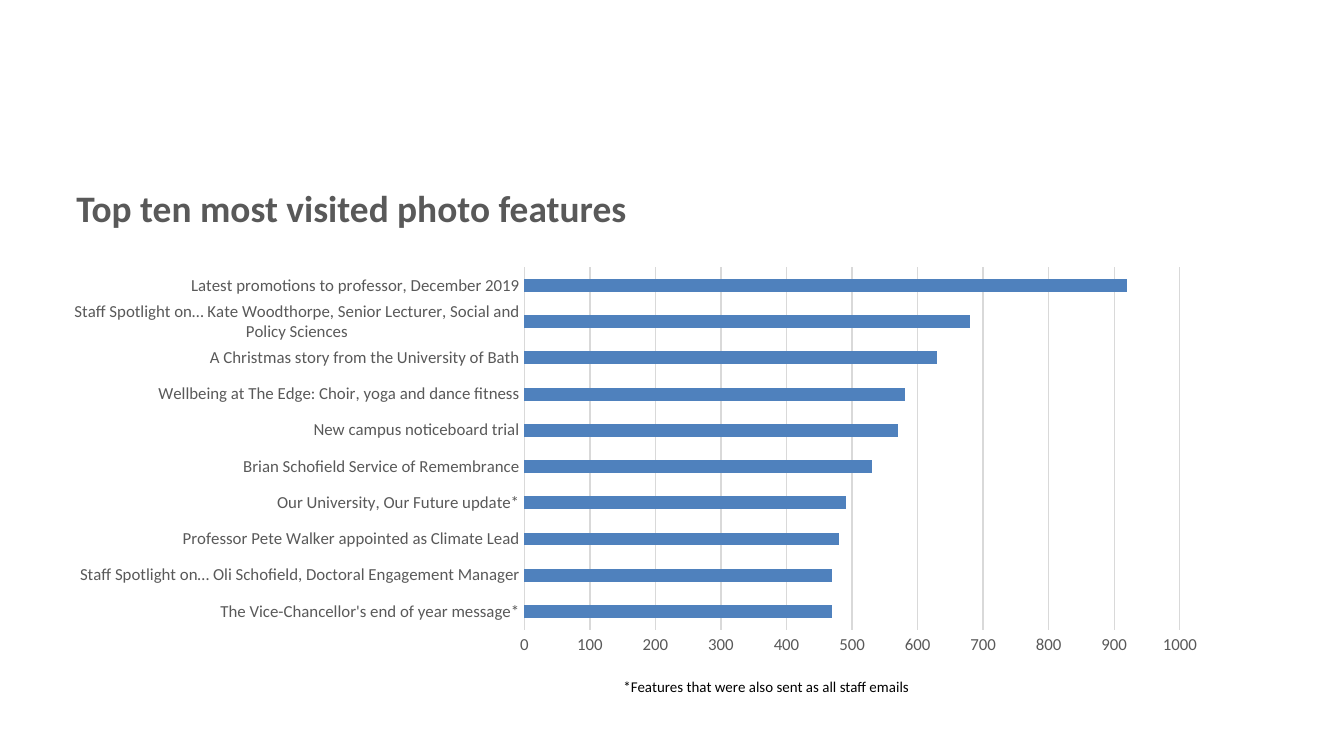
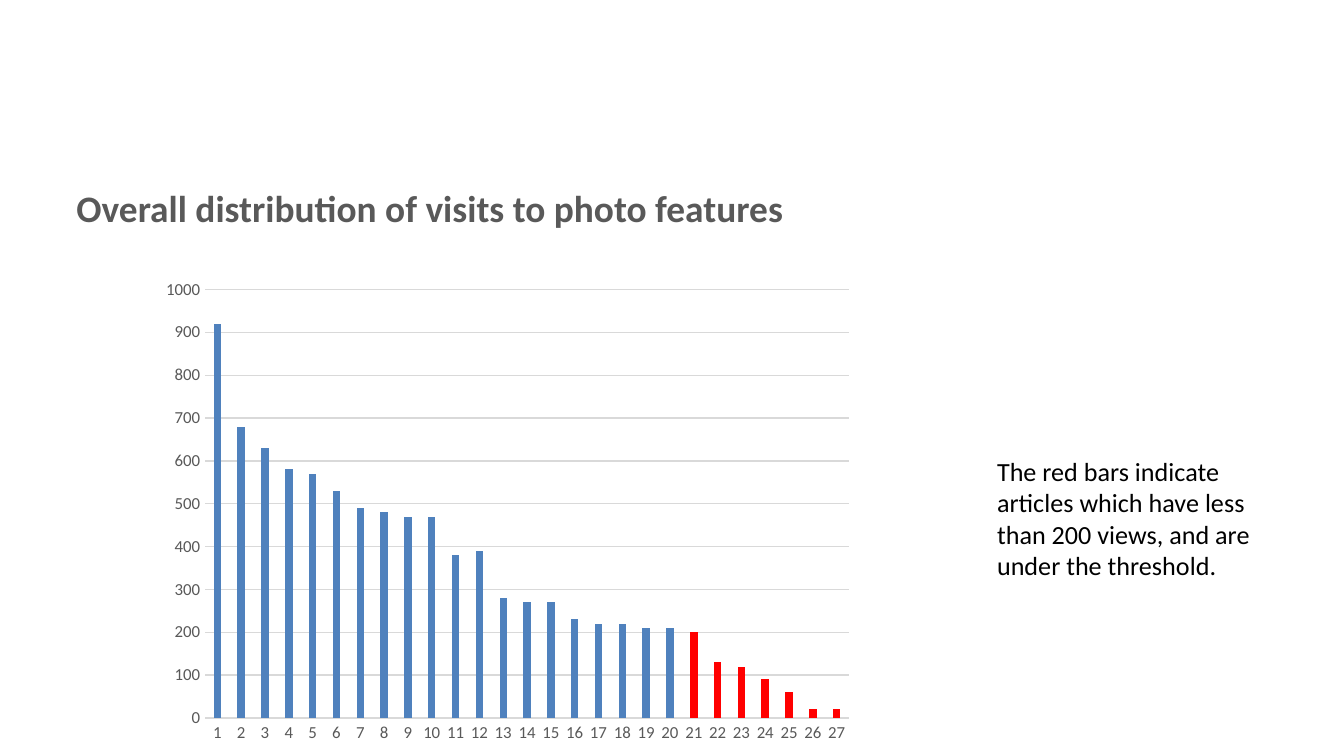
from dataclasses import dataclass

from pptx import Presentation
from pptx.chart.data import CategoryChartData
from pptx.dml.color import RGBColor
from pptx.enum.chart import XL_CHART_TYPE as ChartType, XL_TICK_MARK as Tick
from pptx.enum.text import MSO_AUTO_SIZE as AutoSize
from pptx.util import Inches, Pt


@dataclass(frozen=True)
class Theme:
    font: str = "Calibri"
    grey: RGBColor = RGBColor(0x59, 0x59, 0x59)
    black: RGBColor = RGBColor(0, 0, 0)
    grid: RGBColor = RGBColor(0xD9, 0xD9, 0xD9)
    bar: RGBColor = RGBColor(0x4F, 0x81, 0xBD)
    low_bar: RGBColor = RGBColor(0xFF, 0, 0)
    title_size: int = 20
    remark_size: int = 14
    chart_size: int = 10
    axis_size: int = 9
    footnote_size: int = 8
    line_width: float = 0.75


theme = Theme()
TITLE_AREA = (0.47, 1.33, 6.6, 0.67)


def add_text(slide, area, text, size, color, bold=False, grow=True):
    frame = slide.shapes.add_textbox(*map(Inches, area)).text_frame
    frame.word_wrap = True
    frame.auto_size = AutoSize.SHAPE_TO_FIT_TEXT if grow else AutoSize.NONE
    run = frame.paragraphs[0].add_run()
    run.text = text
    run.font.name = theme.font
    run.font.size = Pt(size)
    run.font.bold = bold
    run.font.color.rgb = color


def add_visits_chart(slide, area, kind, labels, visits, gap, overlap=0):
    data = CategoryChartData()
    data.categories = labels
    data.add_series("Series 1", visits)
    chart = slide.shapes.add_chart(kind, *map(Inches, area), data).chart
    chart.has_legend = False
    chart.has_title = False
    chart.font.name = theme.font
    chart.font.size = Pt(theme.chart_size)
    chart.font.color.rgb = theme.black

    for axis in (chart.category_axis, chart.value_axis):
        axis.major_tick_mark = axis.minor_tick_mark = Tick.NONE
        labels_font = axis.tick_labels.font
        labels_font.name = theme.font
        labels_font.size = Pt(theme.axis_size)
        labels_font.color.rgb = theme.grey
    chart.category_axis.has_major_gridlines = False
    chart.value_axis.has_major_gridlines = True
    chart.value_axis.minimum_scale = 0
    chart.value_axis.maximum_scale = 1000
    chart.value_axis.major_unit = 100
    chart.value_axis.format.line.fill.background()
    for line in (chart.category_axis.format.line,
                 chart.value_axis.major_gridlines.format.line):
        line.color.rgb = theme.grid
        line.width = Pt(theme.line_width)

    plot = chart.plots[0]
    plot.vary_by_categories = False
    plot.gap_width = gap
    plot.overlap = overlap
    series = plot.series[0]
    series.invert_if_negative = False
    series.format.fill.solid()
    series.format.fill.fore_color.rgb = theme.bar
    return series


# A 16:9 page
deck = Presentation()
deck.slide_width = Inches(10)
deck.slide_height = deck.slide_width * 9 // 16
blank = deck.slide_layouts[6]

# Slide 1: the ten most visited features, most visited first
top_features = [
    ("Latest promotions to professor, December 2019", 920),
    ("Staff Spotlight on… Kate Woodthorpe, Senior Lecturer, "
     "Social and Policy Sciences", 680),
    ("A Christmas story from the University of Bath", 630),
    ("Wellbeing at The Edge: Choir, yoga and dance fitness", 580),
    ("New campus noticeboard trial", 570),
    ("Brian Schofield Service of Remembrance", 530),
    ("Our University, Our Future update*", 490),
    ("Professor Pete Walker appointed as Climate Lead", 480),
    ("Staff Spotlight on… Oli Schofield, Doctoral Engagement Manager", 470),
    ("The Vice-Chancellor's end of year message*", 470),
]
top_ten = deck.slides.add_slide(blank)
add_text(top_ten, TITLE_AREA, "Top ten most visited photo features",
         theme.title_size, theme.grey, bold=True, grow=False)
# A bar chart stacks its categories from the bottom up
features, feature_visits = zip(*reversed(top_features))
add_visits_chart(top_ten, (0.38, 1.93, 8.7, 3), ChartType.BAR_CLUSTERED,
                 features, feature_visits, gap=182)
add_text(top_ten, (4.54, 4.99, 4.81, 0.24),
         "*Features that were also sent as all staff emails",
         theme.footnote_size, theme.black)

# Slide 2: visits to every feature, with those under the threshold in red
all_visits = [920, 680, 630, 580, 570, 530, 490, 480, 470,
              470, 380, 390, 280, 270, 270, 230, 220, 220,
              210, 210, 200, 130, 120, 90, 60, 20, 20]
first_low_rank = 21
ranks = range(1, len(all_visits) + 1)

distribution = deck.slides.add_slide(blank)
add_text(distribution, TITLE_AREA,
         "Overall distribution of visits to photo features",
         theme.title_size, theme.grey, bold=True, grow=False)
add_text(distribution, (7.32, 3.34, 2.38, 1.04),
         "The red bars indicate articles which have less than 200 views, "
         "and are under the threshold.",
         theme.remark_size, theme.black)
visit_bars = add_visits_chart(
    distribution, (1.13, 2.01, 5.29, 3.59), ChartType.COLUMN_CLUSTERED,
    [str(rank) for rank in ranks], all_visits, gap=219, overlap=-27)
for rank in ranks[first_low_rank - 1:]:
    low_fill = visit_bars.points[rank - 1].format.fill
    low_fill.solid()
    low_fill.fore_color.rgb = theme.low_bar

deck.save("out.pptx")
